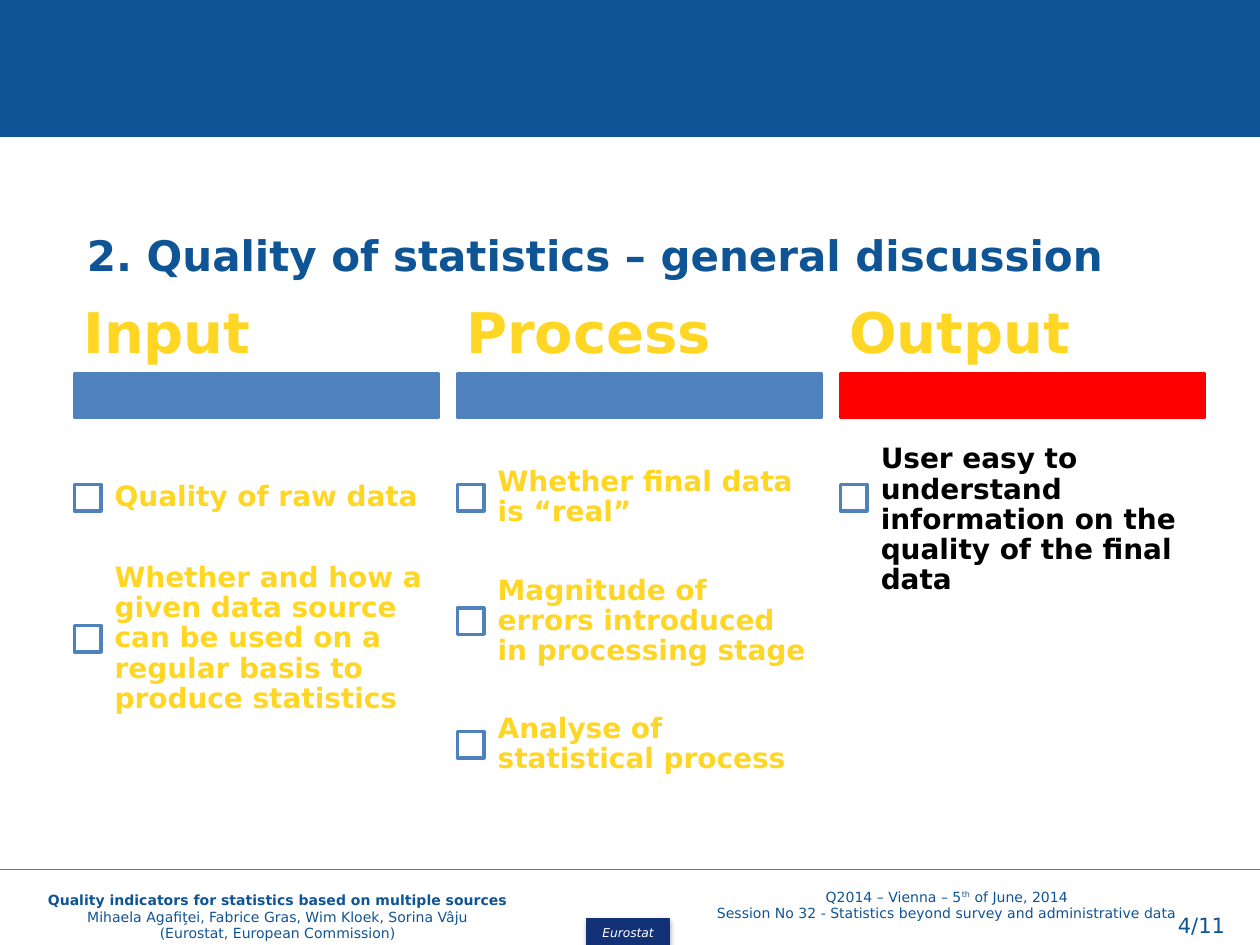
import dataclasses

import lxml.etree
import pptx
import pptx.dml.color
import pptx.enum.shapes
import pptx.enum.text
import pptx.oxml
import pptx.oxml.ns
import pptx.util

Inches = pptx.util.Inches
Align = pptx.enum.text.PP_ALIGN
Anchor = pptx.enum.text.MSO_ANCHOR


@dataclasses.dataclass(frozen=True)
class Theme:
    font: str = "DejaVu Sans"
    blue: str = "0F5494"
    navy: str = "133176"
    steel: str = "4F81BD"
    rule: str = "4B7EBC"
    yellow: str = "FFD624"
    red: str = "FF0000"
    black: str = "000000"
    white: str = "FFFFFF"
    heading_size: int = 32
    title_size: int = 24
    item_size: int = 16
    number_size: int = 12
    footer_size: int = 8
    badge_size: int = 7


@dataclasses.dataclass
class Run:
    text: str
    bold: bool = False
    italic: bool = False
    superscript: bool = False


@dataclasses.dataclass
class Item:
    text: str
    row_height: float = 0.98
    text_height: float = 0.98


@dataclasses.dataclass
class Column:
    heading: str
    items: list
    bar_color: str
    text_color: str


def rgb(value):
    return pptx.dml.color.RGBColor.from_string(value)


class SlideBuilder:
    def __init__(self, slide, theme):
        self.slide = slide
        self.theme = theme

    def fill_text(self, shape, paragraphs, size, color, align=Align.LEFT,
                  anchor=Anchor.TOP, margins=(0.1, 0.05), first_spacing=1.0):
        """Fill a shape with paragraphs, each a list of runs; first_spacing is for the first one."""
        frame = shape.text_frame
        frame.word_wrap = True
        frame.auto_size = pptx.enum.text.MSO_AUTO_SIZE.NONE
        frame.vertical_anchor = anchor
        frame.margin_left = frame.margin_right = Inches(margins[0])
        frame.margin_top = frame.margin_bottom = Inches(margins[1])
        for index, runs in enumerate(paragraphs):
            paragraph = frame.add_paragraph() if index else frame.paragraphs[0]
            paragraph.alignment = align
            paragraph.line_spacing = 1.0 if index else first_spacing
            for part in runs:
                run = paragraph.add_run()
                run.text = part.text
                run.font.name = self.theme.font
                run.font.size = pptx.util.Pt(size)
                run.font.color.rgb = rgb(color)
                run.font.bold = part.bold
                run.font.italic = part.italic
                if part.superscript:
                    run.font._element.set("baseline", "30000")

    def title(self, text, left, top, width, height):
        shape = self.slide.shapes.title
        shape.left, shape.top = Inches(left), Inches(top)
        shape.width, shape.height = Inches(width), Inches(height)
        self.fill_text(shape, [[Run(text, bold=True)]], self.theme.title_size,
                       self.theme.blue, first_spacing=1.5)

    def text(self, left, top, width, height, paragraphs, size, color, **style):
        shape = self.slide.shapes.add_textbox(
            Inches(left), Inches(top), Inches(width), Inches(height))
        self.fill_text(shape, paragraphs, size, color, **style)

    def rectangle(self, left, top, width, height, fill, line, line_width):
        shape = self.slide.shapes.add_shape(
            pptx.enum.shapes.MSO_SHAPE.RECTANGLE,
            Inches(left), Inches(top), Inches(width), Inches(height))
        shape.shadow.inherit = False
        shape.fill.solid()
        shape.fill.fore_color.rgb = rgb(fill)
        shape.line.color.rgb = rgb(line)
        shape.line.width = pptx.util.Pt(line_width)
        return shape

    def badge(self, text, left, top, width, height):
        navy = self.theme.navy
        shape = self.rectangle(left, top, width, height, navy, navy, 0.75)
        effects = shape._element.spPr.find(pptx.oxml.ns.qn("a:effectLst"))
        effects.append(pptx.oxml.parse_xml(
            f'<a:outerShdw {pptx.oxml.ns.nsdecls("a")} blurRad="{pptx.util.Pt(3.1)}" '
            f'dist="{pptx.util.Pt(1.8)}" dir="5400000" rotWithShape="0">'
            f'<a:srgbClr val="{self.theme.black}"><a:alpha val="35000"/></a:srgbClr>'
            '</a:outerShdw>'))
        self.fill_text(shape, [[Run(text, italic=True)]], self.theme.badge_size,
                       self.theme.white, align=Align.CENTER, anchor=Anchor.MIDDLE)

    def horizontal_line(self, left, right, y):
        line = self.slide.shapes.add_connector(
            pptx.enum.shapes.MSO_CONNECTOR.STRAIGHT,
            Inches(left), Inches(y), Inches(right), Inches(y))
        line.line.color.rgb = rgb(self.theme.rule)
        line.line.width = pptx.util.Pt(0.75)
        lxml.etree.SubElement(line._element.spPr, pptx.oxml.ns.qn("a:effectLst"))

    def column(self, column, left):
        """Draw a heading, its bar and the checkbox items stacked below."""
        theme, width, checkbox, indent = self.theme, 2.89, 0.21, 0.2
        self.rectangle(left, 2.97, width, 0.34, column.bar_color, column.bar_color, 2)
        self.text(left, 2.36, width, 0.61, [[Run(column.heading, bold=True)]],
                  theme.heading_size, theme.yellow, anchor=Anchor.MIDDLE,
                  margins=(0.07, 0.04), first_spacing=0.9)
        top = 3.46
        for item in column.items:
            self.rectangle(left, top + (item.row_height - checkbox) / 2,
                           checkbox, checkbox, theme.white, theme.steel, 2)
            self.text(left + indent, top, width - indent, item.text_height,
                      [[Run(item.text, bold=True)]], theme.item_size,
                      column.text_color, anchor=Anchor.MIDDLE,
                      margins=(0.12, 0.12), first_spacing=0.9)
            top += item.row_height


def main():
    theme = Theme()
    presentation = pptx.Presentation()
    presentation.slide_width, presentation.slide_height = Inches(10), Inches(7.5)
    title_only = presentation.slide_layouts[5]
    builder = SlideBuilder(presentation.slides.add_slide(title_only), theme)

    builder.rectangle(0, 0, 10, 1.08, theme.blue, theme.blue, 0.75)
    builder.badge("Eurostat", 4.66, 7.29, 0.65, 0.22)
    builder.title("2. Quality of statistics – general discussion", 0.59, 1.57, 9.06, 0.71)

    columns = [
        Column("Input", [
            Item("Quality of raw data"),
            Item("Whether and how a given data source can be used on a "
                 "regular basis to produce statistics", 1.26, 1.26),
        ], theme.steel, theme.yellow),
        Column("Process", [
            Item("Whether final data is “real”"),
            Item("Magnitude of errors introduced in processing stage"),
            Item("Analyse of statistical process"),
        ], theme.steel, theme.yellow),
        Column("Output", [
            Item("User easy to understand information on the quality of "
                 "the final data", text_height=1.34),
        ], theme.red, theme.black),
    ]
    column_pitch = 3.04
    for index, column in enumerate(columns):
        builder.column(column, 0.59 + index * column_pitch)

    builder.text(9.25, 7.09, 0.79, 0.4, [[Run("4/11")]], theme.number_size,
                 theme.blue, first_spacing=1.5)
    builder.horizontal_line(0, 10, 6.9)
    builder.text(0, 6.96, 4.41, 0.57, [
        [Run("Quality indicators for statistics based on multiple sources", bold=True)],
        [Run("Mihaela Agafiţei, Fabrice Gras, Wim Kloek, Sorina Vâju")],
        [Run("(Eurostat, European Commission)")],
    ], theme.footer_size, theme.blue, align=Align.CENTER, first_spacing=1.5)
    builder.text(5.31, 7, 4.41, 0.37, [
        [Run("Q2014 – Vienna – 5"), Run("th", superscript=True), Run(" of June, 2014")],
        [Run("Session No 32 - Statistics beyond survey and administrative data")],
    ], theme.footer_size, theme.blue, align=Align.CENTER)

    presentation.save("out.pptx")


if __name__ == "__main__":
    main()
